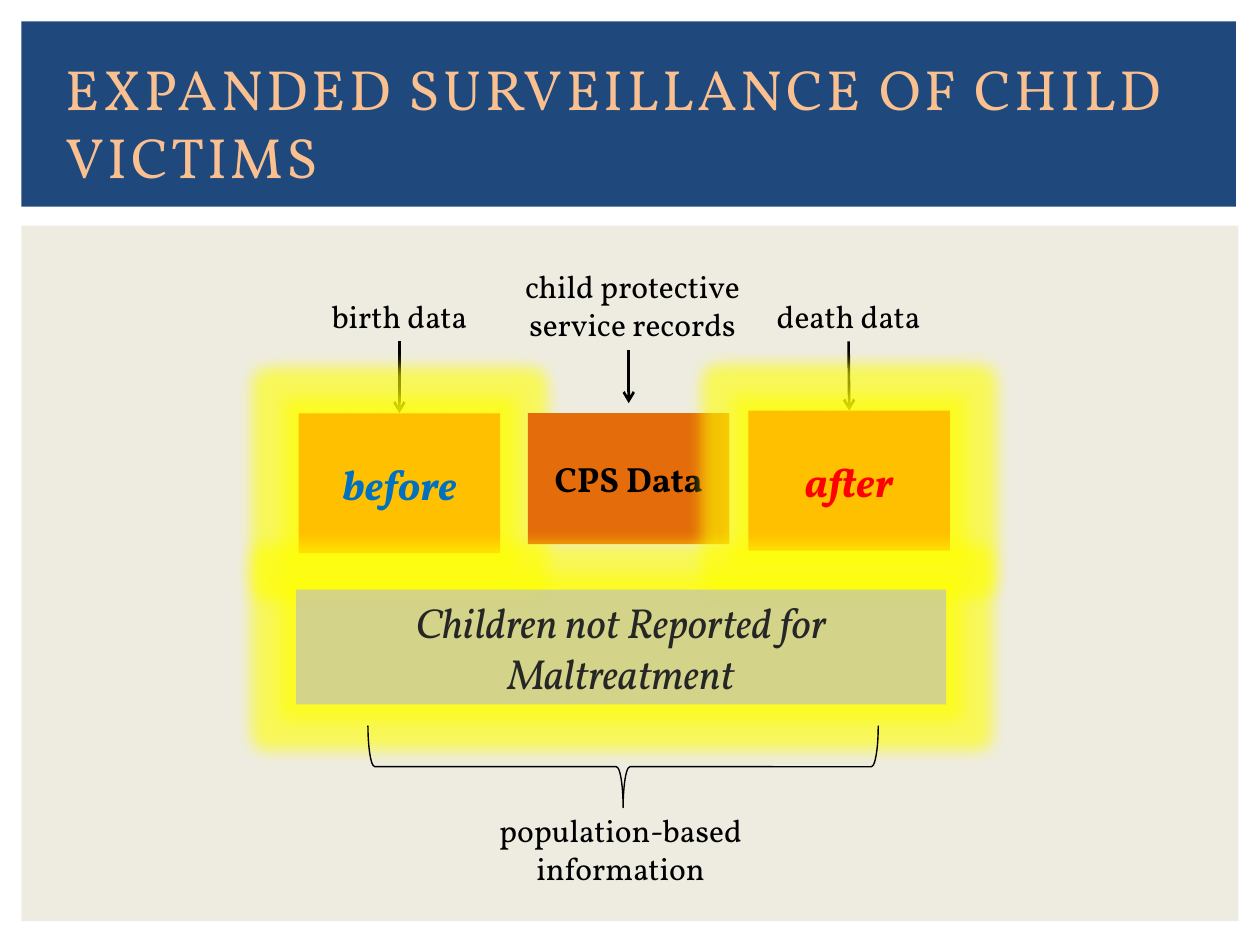
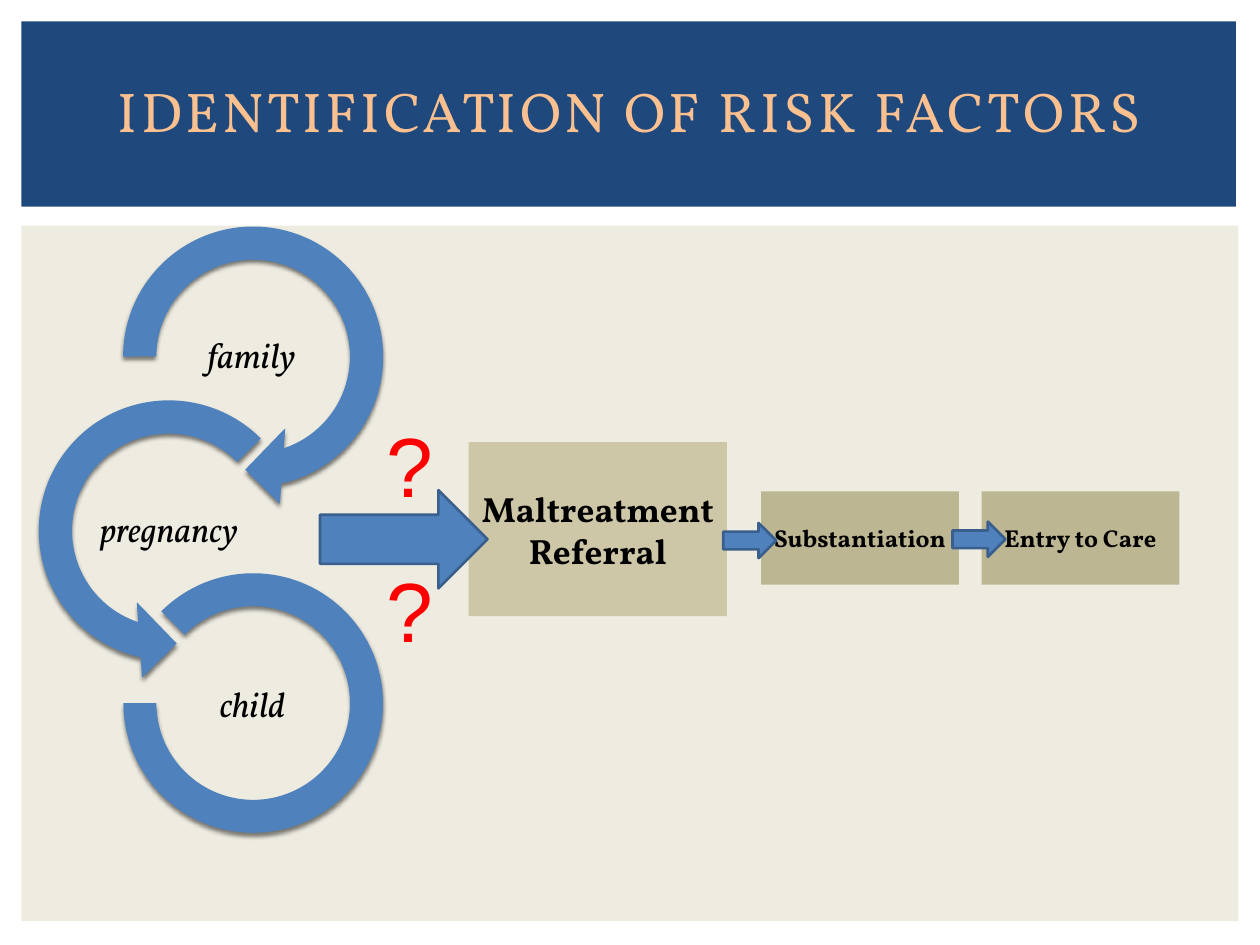
from lxml import etree
from pptx import Presentation
from pptx.dml.color import RGBColor
from pptx.enum.shapes import MSO_CONNECTOR, MSO_SHAPE
from pptx.enum.text import MSO_ANCHOR, MSO_AUTO_SIZE, PP_ALIGN
from pptx.oxml.ns import qn
from pptx.util import Inches, Pt

RECTANGLE = MSO_SHAPE.RECTANGLE
RIGHT_ARROW = MSO_SHAPE.RIGHT_ARROW
RIGHT_BRACE = MSO_SHAPE.RIGHT_BRACE
CLOCKWISE = MSO_SHAPE.CIRCULAR_ARROW
COUNTERCLOCKWISE = MSO_SHAPE.LEFT_CIRCULAR_ARROW
BLOCK_ARC = MSO_SHAPE.BLOCK_ARC
STRAIGHT = MSO_CONNECTOR.STRAIGHT
LEFT, CENTER = PP_ALIGN.LEFT, PP_ALIGN.CENTER
TOP, MIDDLE = MSO_ANCHOR.TOP, MSO_ANCHOR.MIDDLE
NO_AUTOFIT = MSO_AUTO_SIZE.NONE
BODY_FONT, MARK_FONT = "Vollkorn", "Arial"
COLORS = {
    "panel": "EEECE1", "band": "1F497D", "title": "FAC090", "text": "000000",
    "gold": "FFC000", "orange": "E46C0A", "gray": "BFBFBF", "dark": "262626",
    "before": "0070C0", "red": "FF0000", "glow": "FFFF00",
    "referral": "C4BD97", "outcome": "948A54", "arrow": "4F81BD", "edge": "3A5F8C",
}


def rgb(name):
    """Return the named palette colour."""
    return RGBColor.from_string(COLORS[name])


def lengths(*values):
    """Turn numbers of inches into lengths."""
    return [Inches(value) for value in values]


def add_color(parent, name, alpha):
    """Append a translucent colour, alpha in percent, to an XML parent."""
    color = etree.SubElement(parent, qn("a:srgbClr"), val=COLORS[name])
    etree.SubElement(color, qn("a:alpha"), val=str(alpha * 1000))


def add_effect(shape, tag, color, alpha, **settings):
    """Give a shape a glow or a shadow."""
    effects = shape._element.spPr.find(qn("a:effectLst"))
    effect = etree.SubElement(effects, qn(tag), **settings)
    add_color(effect, color, alpha)


def add_glow(shape):
    """Surround a shape with a yellow glow."""
    add_effect(shape, "a:glow", "glow", 60, rad=str(Pt(18)))


def add_figure(page, kind, box, fill=None, alpha=100, edge=None, width=1.5):
    """Add a preset shape without a shadow."""
    shape = page.shapes.add_shape(kind, *lengths(*box))
    shape.shadow.inherit = False
    if fill:
        shape.fill.solid()
        shape.fill.fore_color.rgb = rgb(fill)
        if alpha < 100:
            solid = shape._element.spPr.find(qn("a:solidFill"))
            solid.clear()
            add_color(solid, fill, alpha)
    else:
        shape.fill.background()
    if edge:
        shape.line.color.rgb = rgb(edge)
        shape.line.width = Pt(width)
    else:
        shape.line.fill.background()
    return shape


def write(shape, text, size, color="text", bold=False, italic=False,
          font=BODY_FONT, anchor=MIDDLE, align=CENTER):
    """Write text, one paragraph per line, with one format."""
    frame = shape.text_frame
    frame.word_wrap = True
    frame.auto_size = NO_AUTOFIT
    frame.vertical_anchor = anchor
    frame.text = text
    for paragraph in frame.paragraphs:
        paragraph.alignment = align
        paragraph.font.name = font
        paragraph.font.size = Pt(size)
        paragraph.font.bold = bold
        paragraph.font.italic = italic
        paragraph.font.color.rgb = rgb(color)


def add_label(page, box, text, size=18, **style):
    """Add a text box and return it."""
    label = page.shapes.add_textbox(*lengths(*box))
    write(label, text, size, **{"anchor": TOP, **style})
    return label


def add_pointer(page, center, top, bottom):
    """Add a thin downward arrow."""
    line = page.shapes.add_connector(STRAIGHT, *lengths(center, top, center, bottom))
    line.line.color.rgb = rgb("text")
    line.line.width = Pt(1.5)
    properties = line._element.spPr
    etree.SubElement(line.line._get_or_add_ln(), qn("a:tailEnd"), type="arrow")
    etree.SubElement(properties, qn("a:effectLst"))
    return line


def add_background(page):
    """Place the panel and the title band on the shared layout."""
    tree = page.slide_layout.shapes._spTree
    parts = (((0.17, 1.79, 9.66, 5.52), "panel"), ((0.17, 0.17, 9.64, 1.47), "band"))
    for index, (box, color) in enumerate(parts):
        shape = add_figure(page, RECTANGLE, box, color)
        tree.insert(2 + index, shape._element)


def set_title(page, box, text, size, align):
    """Place and format the title placeholder."""
    title = page.shapes.title
    title.left, title.top, title.width, title.height = lengths(*box)
    write(title, text, size, "title", align=align)
    for span in title.text_frame.paragraphs[0].runs:
        span._r.get_or_add_rPr().set("spc", "200")


def add_data_columns(page, left, top):
    """Draw the three data sources, each pointing to its period."""
    columns = (
        ("birth data", (0.11, 0.24, 1.42, 0.4), 0.82, 1.19, True,
         (0.02, 1.21, 1.6, 1.11), "gold", ("before", 24, "before", True, True)),
        ("child protective service records", (1.61, 0, 2.12, 0.71), 2.64, 1.13, False,
         (1.84, 1.21, 1.6, 1.04), "orange", ("CPS Data", 20, "text", True)),
        ("death data", (3.51, 0.24, 1.75, 0.4), 4.39, 1.19, True,
         (3.59, 1.19, 1.6, 1.11), "gold", ("after", 24, "red", True, True)),
    )
    for source, label_box, center, tip, joined, period_box, fill, period_text in columns:
        x, y, width, height = label_box
        label = add_label(page, (left + x, top + y, width, height), source)
        pointer = add_pointer(page, left + center, top + y + height, top + tip)
        x, y, width, height = period_box
        period = add_figure(page, RECTANGLE, (left + x, top + y, width, height), fill)
        write(period, *period_text)
        if joined:
            pointer.begin_connect(label, 2)
            pointer.end_connect(period, 0)
            add_glow(period)


def add_population(page, left, top):
    """Draw the unreported children, the brace and its caption."""
    children = add_figure(page, RECTANGLE, (left, top, 5.16, 0.91), "gray", 66)
    write(children, "Children not Reported for Maltreatment", 24, "dark", italic=True)
    add_glow(children)
    brace = add_figure(page, RIGHT_BRACE, (left + 2.27, top - 0.62, 0.65, 4.05),
                       edge="text", width=0.79)
    brace.rotation = 90
    add_label(page, (left + 0.96, top + 1.71, 3.23, 0.71), "population-based information")


def add_risk_chain(page, left, top):
    """Draw the three interlocking rings and their labels."""
    rings = (
        (CLOCKWISE, (0.67, 0, 2.4, 2.4), (0.11, 11.42, 45, 108, 0.125),
         "family", (1.19, 0.87, 1.33, 0.67)),
        (COUNTERCLOCKWISE, (0, 1.38, 2.4, 2.4), (0.11, 11.42, 63, 189, 0.125),
         "pregnancy", (0.45, 2.25, 1.5, 0.67)),
        (BLOCK_ARC, (0.84, 2.92, 2.06, 2.06), (135, 108, 0.127),
         "child", (1.2, 3.64, 1.33, 0.67)),
    )
    for kind, (x, y, *size), adjustments, text, (label_x, label_y, *label_size) in rings:
        ring = add_figure(page, kind, (left + x, top + y, *size), "arrow")
        for index, value in enumerate(adjustments):
            ring.adjustments[index] = value
        add_effect(ring, "a:outerShdw", "text", 50, blurRad=str(Pt(2.5)),
                   dist=str(Pt(2)), dir="5400000", rotWithShape="0")
        label = add_label(page, (left + label_x, top + label_y, *label_size), text, 20,
                          italic=True, anchor=MIDDLE)
        label.text_frame.paragraphs[0].line_spacing = 0.9


def add_case_flow(page, left, top):
    """Draw the steps from referral to care, with arrows and question marks."""
    steps = (
        ((1.36, 0.28, 2.05, 1.38), "referral", 77, "Maltreatment\nReferral", 20),
        ((3.68, 0.67, 1.57, 0.74), "outcome", 55, "Substantiation", 14),
        ((5.43, 0.67, 1.57, 0.74), "outcome", 55, "Entry to Care", 14),
    )
    for (x, y, *size), color, alpha, text, points in steps:
        step = add_figure(page, RECTANGLE, (left + x, top + y, *size), color, alpha)
        write(step, text, points, bold=True)
    for y in (0, 1.15):
        add_label(page, (left, top + y, 1.79, 0.91), "?", 48, color="red", font=MARK_FONT)
    arrows = ((3.38, 0.92, 0.42, 0.28), (5.2, 0.91, 0.42, 0.28), (0.18, 0.66, 1.33, 0.78))
    for x, y, *size in arrows:
        add_figure(page, RIGHT_ARROW, (left + x, top + y, *size), "arrow", edge="edge")


def build_surveillance(page):
    """Build the slide on expanded surveillance."""
    set_title(page, (0.42, 0.39, 9.17, 1.15), "EXPANDED SURVEILLANCE OF CHILD VICTIMS",
              32.4, LEFT)
    add_data_columns(page, 2.35, 2.07)
    add_population(page, 2.35, 4.68)


def build_risk_factors(page):
    """Build the slide on risk factors."""
    set_title(page, (0.5, 0.25, 9, 1.25), "IDENTIFICATION OF RISK FACTORS", 32, CENTER)
    add_risk_chain(page, 0.14, 1.63)
    add_case_flow(page, 2.36, 3.23)


def main():
    """Build and save the deck."""
    deck = Presentation()
    deck.slide_width, deck.slide_height = lengths(10, 7.5)
    layout = deck.slide_layouts.get_by_name("Title Only")
    pages = [deck.slides.add_slide(layout) for _ in range(2)]
    add_background(pages[0])
    build_surveillance(pages[0])
    build_risk_factors(pages[1])
    deck.save("out.pptx")


if __name__ == "__main__":
    main()
